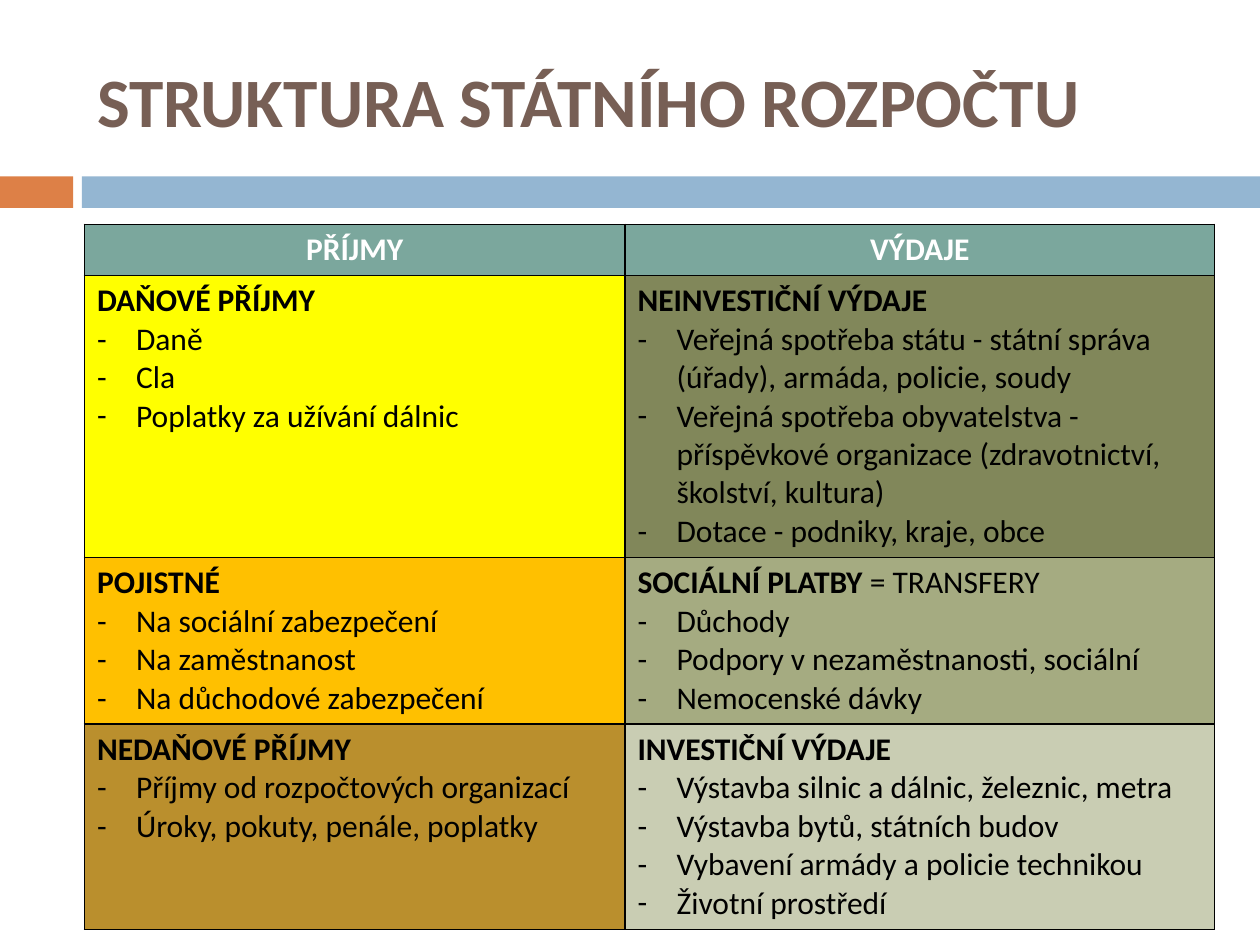
"""Build a slide with a table of state budget revenues and expenditures."""
import lxml.etree
import pptx
import pptx.dml.color
import pptx.enum.shapes
import pptx.enum.text
import pptx.oxml.ns
import pptx.util

Inches = pptx.util.Inches
RGBColor = pptx.dml.color.RGBColor
qn = pptx.oxml.ns.qn

BLACK = RGBColor(0x00, 0x00, 0x00)
WHITE = RGBColor(0xFF, 0xFF, 0xFF)
BROWN = RGBColor(0x77, 0x5F, 0x55)
ORANGE = RGBColor(0xDD, 0x80, 0x47)
BLUE = RGBColor(0x94, 0xB6, 0xD2)
TEAL = RGBColor(0x7B, 0xA7, 0x9D)
YELLOW = RGBColor(0xFF, 0xFF, 0x00)
AMBER = RGBColor(0xFF, 0xC0, 0x00)
OCHRE = RGBColor(0xBA, 0x8F, 0x2D)
DARK_OLIVE = RGBColor(0x81, 0x87, 0x5A)
OLIVE = RGBColor(0xA5, 0xAB, 0x81)
PALE_OLIVE = RGBColor(0xC9, 0xCD, 0xB3)

COLUMN_WIDTHS = [4.29, 4.68]
ROW_HEIGHTS = [0.4, 2.24, 1.32, 1.63]
BUDGET = [
    [(TEAL, "PŘÍJMY", "", []), (TEAL, "VÝDAJE", "", [])],
    [
        (YELLOW, "DAŇOVÉ PŘÍJMY", "", ["Daně", "Cla", "Poplatky za užívání dálnic"]),
        (DARK_OLIVE, "NEINVESTIČNÍ VÝDAJE", "", [
            "Veřejná spotřeba státu - státní správa (úřady), armáda, policie, soudy",
            "Veřejná spotřeba obyvatelstva - příspěvkové organizace "
            "(zdravotnictví, školství, kultura)",
            "Dotace - podniky, kraje, obce",
        ]),
    ],
    [
        (AMBER, "POJISTNÉ", "", [
            "Na sociální zabezpečení", "Na zaměstnanost", "Na důchodové zabezpečení",
        ]),
        (OLIVE, "SOCIÁLNÍ PLATBY ", "= TRANSFERY", [
            "Důchody", "Podpory v nezaměstnanosti, sociální", "Nemocenské dávky",
        ]),
    ],
    [
        (OCHRE, "NEDAŇOVÉ PŘÍJMY", "", [
            "Příjmy od rozpočtových organizací", "Úroky, pokuty, penále, poplatky",
        ]),
        (PALE_OLIVE, "INVESTIČNÍ VÝDAJE", "", [
            "Výstavba silnic a dálnic, železnic, metra",
            "Výstavba bytů, státních budov",
            "Vybavení armády a policie technikou",
            "Životní prostředí",
        ]),
    ],
]


def add_span(para, text, size, color, bold):
    span = para.add_run()
    span.text = text
    span.font.name = "Calibri"
    span.font.size = pptx.util.Pt(size)
    span.font.bold = bold
    span.font.color.rgb = color


def add_borders(cell):
    properties = cell._tc.get_or_add_tcPr()
    for position, side in enumerate(["lnL", "lnR", "lnT", "lnB"]):
        line = lxml.etree.Element(qn(f"a:{side}"), w=str(pptx.util.Pt(1)))
        fill = lxml.etree.SubElement(line, qn("a:solidFill"))
        lxml.etree.SubElement(fill, qn("a:srgbClr"), val=str(BLACK))
        properties.insert(position, line)


deck = pptx.Presentation()
deck.slide_width = Inches(10)
deck.slide_height = Inches(7.5)
page = deck.slides.add_slide(deck.slide_layouts[5])

for left, width, color in [(0, 0.58, ORANGE), (0.65, 9.35, BLUE)]:
    band = page.shapes.add_shape(
        pptx.enum.shapes.MSO_SHAPE.RECTANGLE,
        Inches(left), Inches(1.4), Inches(width), Inches(0.25),
    )
    band.shadow.inherit = False
    band.fill.solid()
    band.fill.fore_color.rgb = color
    band.line.fill.background()

title = page.shapes.title
title.left, title.top = Inches(0.67), Inches(0.25)
title.width, title.height = Inches(8.92), Inches(1.08)
title.text_frame.auto_size = pptx.enum.text.MSO_AUTO_SIZE.NONE
title.text_frame.vertical_anchor = pptx.enum.text.MSO_ANCHOR.MIDDLE
para = title.text_frame.paragraphs[0]
para.alignment = pptx.enum.text.PP_ALIGN.LEFT
add_span(para, "STRUKTURA STÁTNÍHO ROZPOČTU", 39.6, BROWN, True)

table = page.shapes.add_table(
    len(ROW_HEIGHTS), len(COLUMN_WIDTHS), Inches(0.67), Inches(1.78),
    Inches(sum(COLUMN_WIDTHS)), Inches(sum(ROW_HEIGHTS)),
).table
for column, width in zip(table.columns, COLUMN_WIDTHS):
    column.width = Inches(width)
for row, height in zip(table.rows, ROW_HEIGHTS):
    row.height = Inches(height)

for row_index, entries in enumerate(BUDGET):
    for column_index, (color, heading, note, items) in enumerate(entries):
        cell = table.cell(row_index, column_index)
        cell.fill.solid()
        cell.fill.fore_color.rgb = color
        add_borders(cell)
        is_header = row_index == 0
        para = cell.text_frame.paragraphs[0]
        if is_header:
            para.alignment = pptx.enum.text.PP_ALIGN.CENTER
        add_span(para, heading, 18, WHITE if is_header else BLACK, True)
        if note:
            add_span(para, note, 18, BLACK, False)
        for item in items:
            para = cell.text_frame.add_paragraph()
            add_span(para, item, 18, BLACK, False)
            properties = para._p.get_or_add_pPr()
            properties.set("marL", str(Inches(0.31)))
            properties.set("indent", str(Inches(-0.31)))
            lxml.etree.SubElement(properties, qn("a:buFont"), typeface="Calibri")
            lxml.etree.SubElement(properties, qn("a:buChar"), char="-")

deck.save("out.pptx")
